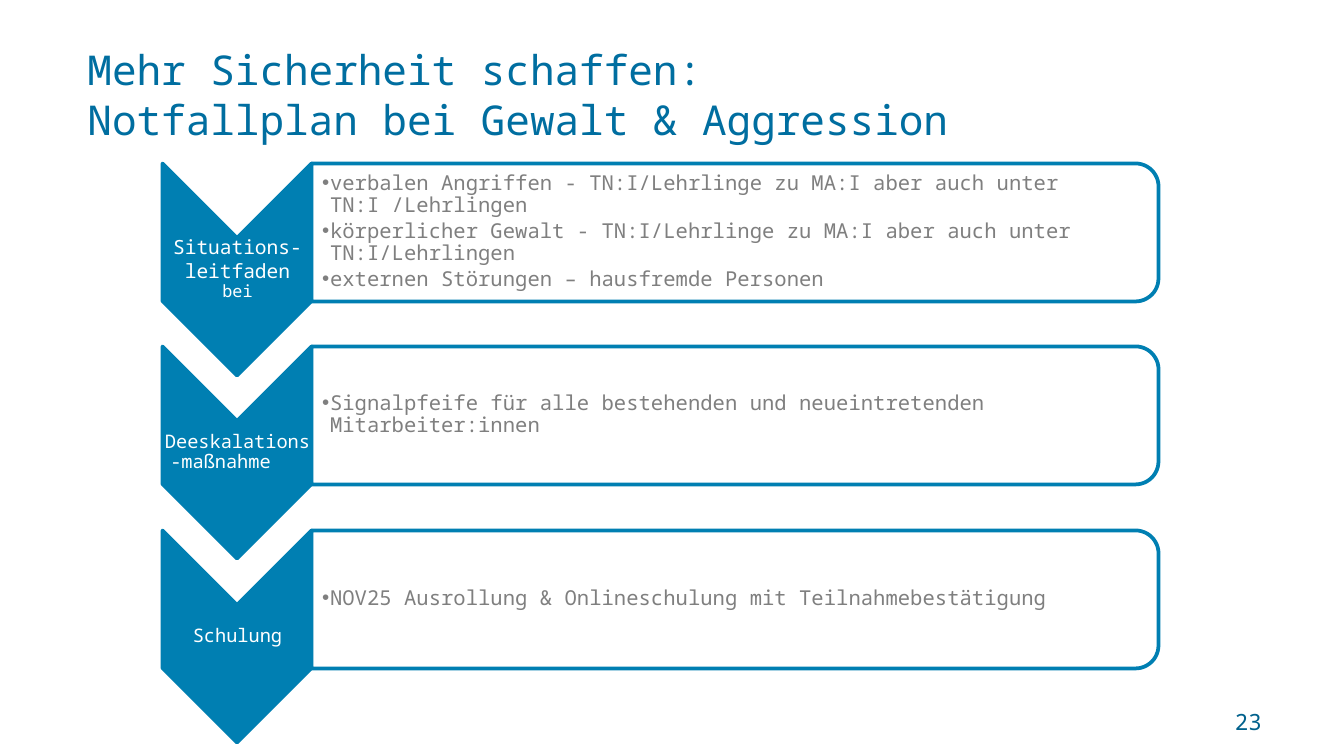
from dataclasses import dataclass
from typing import NamedTuple

from lxml.etree import SubElement
from pptx import Presentation
from pptx.dml.color import RGBColor as Rgb
from pptx.enum.shapes import MSO_SHAPE as Kind
from pptx.enum.text import MSO_ANCHOR as Anchor, MSO_AUTO_SIZE as Fit, PP_ALIGN as Align
from pptx.oxml.ns import qn
from pptx.util import Emu, Pt

SCALE = 9144000 / 1344


@dataclass(frozen=True)
class Theme:
    font: str = "Noto Sans Mono"
    title: Rgb = Rgb(0x00, 0x6E, 0xA0)
    page: Rgb = Rgb(0x00, 0x61, 0x8C)
    main: Rgb = Rgb(0x00, 0x7F, 0xB2)
    body: Rgb = Rgb(0x7F, 0x7F, 0x7F)
    white: Rgb = Rgb(0xFF, 0xFF, 0xFF)
    title_size: float = 22
    page_size: float = 12
    body_size: float = 11
    line: float = 2
    lead: float = 0.9


class Box(NamedTuple):
    left: int
    top: int
    width: int
    height: int


class Piece(NamedTuple):
    text: str
    size: float


class Step(NamedTuple):
    label: list[Piece]
    items: list[str]


THEME = Theme()
TOP, PITCH = 163, 183.5
STEPS = [
    Step([Piece("Situations-leitfaden", 10.5), Piece(" ", 12), Piece("bei", 9)],
         ["verbalen Angriffen - TN:I/Lehrlinge zu MA:I aber auch unter TN:I /Lehrlingen",
          "körperlicher Gewalt - TN:I/Lehrlinge zu MA:I aber auch unter TN:I/Lehrlingen",
          "externen Störungen – hausfremde Personen"]),
    Step([Piece("Deeskalations-maßnahme\t", 10)],
         ["Signalpfeife für alle bestehenden und neueintretenden Mitarbeiter:innen"]),
    Step([Piece("Schulung", 10)],
         ["NOV25 Ausrollung & Onlineschulung mit Teilnahmebestätigung"]),
]


def px(num: float) -> Emu:
    return Emu(round(num * SCALE))


def place(shape, box: Box) -> None:
    shape.left, shape.top, shape.width, shape.height = map(px, box)


def setup(frame, pads: tuple[int, int, int, int] | None = None) -> None:
    frame.word_wrap = True
    frame.auto_size = Fit.NONE
    frame.vertical_anchor = Anchor.MIDDLE
    if pads:
        (frame.margin_left, frame.margin_top,
         frame.margin_right, frame.margin_bottom) = map(px, pads)


def write(para, text: str, size: float, color: Rgb) -> None:
    run = para.add_run()
    run.text = text
    font = run.font
    font.name, font.size, font.bold = THEME.font, Pt(size), False
    font.color.rgb = color


def block(slide, kind: Kind, box: Box, fill: Rgb):
    shape = slide.shapes.add_shape(kind, *map(px, box))
    shape.rotation = 90
    shape.shadow.inherit = False
    shape.fill.solid()
    shape.fill.fore_color.rgb = fill
    shape.line.color.rgb = THEME.main
    shape.line.width = Pt(THEME.line)
    return shape


def bullet(para) -> None:
    props = para._p.get_or_add_pPr()
    props.set("marL", str(px(8)))
    props.set("indent", str(-px(8)))
    SubElement(props, qn("a:buChar")).set("char", "•")


def label(slide, box: Box, parts: list[Piece]) -> None:
    frame = slide.shapes.add_textbox(*map(px, box)).text_frame
    setup(frame, (1, 1, 1, 1))
    para = frame.paragraphs[0]
    para.alignment = Align.CENTER
    para.line_spacing = THEME.lead
    para.space_after = Pt(4)
    for part in parts:
        write(para, part.text, part.size, THEME.white)


def points(slide, holder, box: Box, items: list[str]) -> None:
    slide.shapes.element.append(holder.element)
    place(holder, box)
    frame = holder.text_frame
    setup(frame, (12, 1, 1, 1))
    for num, item in enumerate(items):
        para = frame.add_paragraph() if num else frame.paragraphs[0]
        para.level = 1
        para.alignment = Align.LEFT
        para.line_spacing = THEME.lead
        para.space_before = Pt(0)
        para.space_after = Pt(2)
        bullet(para)
        write(para, item, THEME.body_size, THEME.body)


def draw(slide, step: Step, holder, top: int) -> None:
    block(slide, Kind.CHEVRON, Box(131, top + 32, 212, 149), THEME.main)
    label(slide, Box(163, top + 75, 149, 63), step.label)
    bar = block(slide, Kind.ROUND_2_SAME_RECTANGLE,
                Box(666, top - 354, 138, 847), THEME.white)
    tint = bar.element.spPr.find(qn("a:solidFill"))[0]
    SubElement(tint, qn("a:alpha")).set("val", "90000")
    points(slide, holder, Box(310, top + 6, 840, 125), step.items)


def main() -> None:
    deck = Presentation()
    deck.slide_width, deck.slide_height = px(1344), px(756)
    slide = deck.slides.add_slide(deck.slide_layouts[4])
    title, *bodies = list(slide.placeholders)

    place(title, Box(74, 31, 996, 126))
    setup(title.text_frame)
    para = title.text_frame.paragraphs[0]
    para.alignment = Align.LEFT
    para.line_spacing = 1.0
    write(para, "Mehr Sicherheit schaffen:", THEME.title_size, THEME.title)
    para.add_line_break()
    write(para, "Notfallplan bei Gewalt & Aggression", THEME.title_size, THEME.title)

    for num, (step, holder) in enumerate(zip(STEPS, bodies)):
        draw(slide, step, holder, int(TOP + num * PITCH))
    for spare in bodies[len(STEPS):]:
        slide.shapes.element.remove(spare.element)

    page = slide.shapes.add_textbox(*map(px, Box(962, 702, 313, 40))).text_frame
    setup(page)
    page.paragraphs[0].alignment = Align.RIGHT
    write(page.paragraphs[0], "23", THEME.page_size, THEME.page)
    deck.save("out.pptx")


if __name__ == "__main__":
    main()
